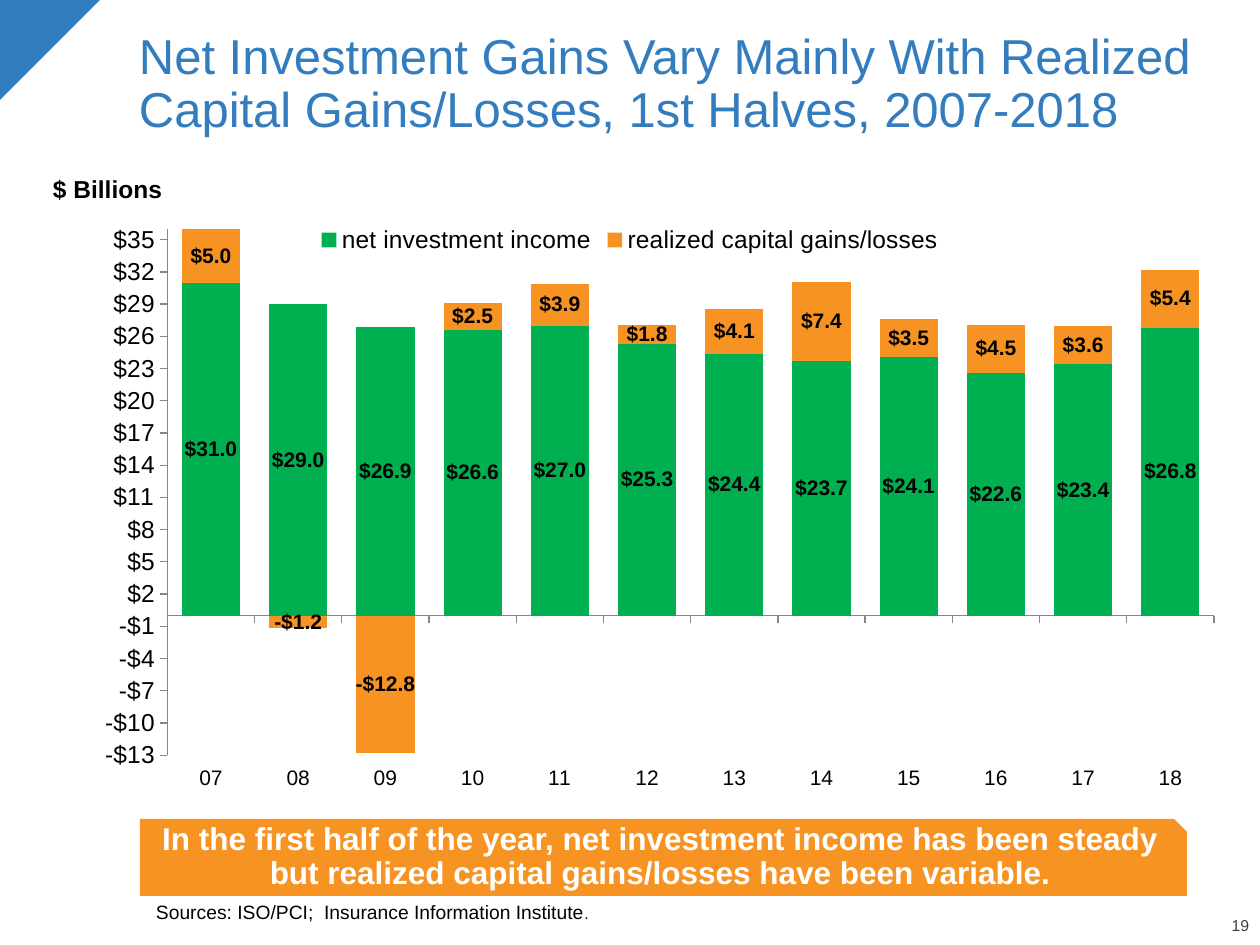
from lxml.etree import SubElement
from pptx import Presentation
from pptx.chart.data import CategoryChartData
from pptx.dml.color import RGBColor
from pptx.enum.chart import XL_CHART_TYPE, XL_LABEL_POSITION, XL_LEGEND_POSITION, XL_TICK_LABEL_POSITION, XL_TICK_MARK
from pptx.enum.shapes import MSO_SHAPE
from pptx.enum.text import MSO_ANCHOR, PP_ALIGN
from pptx.oxml.ns import qn
from pptx.util import Emu, Pt

SCALE = 914400 / 126
BLUE, GREEN, ORANGE = "337DBE", "00B050", "F69322"
BLACK, WHITE, GRAY, AXIS = "000000", "FFFFFF", "404040", "868686"
YEARS = [f"{year:02}" for year in range(7, 19)]
SERIES = [
    ("net investment income", GREEN,
     [31, 29, 26.9, 26.6, 27, 25.3, 24.4, 23.7, 24.1, 22.6, 23.4, 26.8]),
    ("realized capital gains/losses", ORANGE,
     [5, -1.2, -12.8, 2.5, 3.9, 1.8, 4.1, 7.4, 3.5, 4.5, 3.6, 5.4]),
]
PLOT = {"x": 0.108, "y": 0.028, "w": 0.887, "h": 0.867}


def px(*lengths):
    """Turn pixel lengths into EMU."""
    return [Emu(round(n * SCALE)) for n in lengths]


def color(hex_value):
    """Return the colour of a hex string."""
    return RGBColor.from_string(hex_value)


def set_attrs(target, values):
    """Set each attribute named in a dict."""
    for name, value in values.items():
        setattr(target, name, value)


def style_font(font, size, hex_value=BLACK, bold=False):
    """Apply the deck's typeface with a size and colour."""
    set_attrs(font, {"name": "Arial", "size": Pt(size), "bold": bold})
    font.color.rgb = color(hex_value)


def write_text(sp, runs, hex_value=BLACK, bold=False, align=PP_ALIGN.LEFT,
               anchor=MSO_ANCHOR.MIDDLE, insets=(13, 6, 13, 6)):
    """Fill a shape with one paragraph of (text, size) runs."""
    tf = sp.text_frame
    sides = ("margin_left", "margin_top", "margin_right", "margin_bottom")
    set_attrs(tf, {"word_wrap": True, "vertical_anchor": anchor,
                   **dict(zip(sides, px(*insets)))})
    p = tf.paragraphs[0]
    set_attrs(p, {"alignment": align, "line_spacing": 0.9})
    for text, size in runs:
        r = p.add_run()
        r.text = text
        style_font(r.font, size, hex_value, bold)


def add_text(s, box, runs, **style):
    """Add a text box."""
    write_text(s.shapes.add_textbox(*px(*box)), runs, **style)


def add_block(s, preset, box, fill):
    """Add a filled preset shape without outline."""
    sp = s.shapes.add_shape(preset, *px(*box))
    sp.shadow.inherit = False
    sp.fill.solid()
    sp.fill.fore_color.rgb = color(fill)
    sp.line.fill.background()
    return sp


def place_plot(chart):
    """Fix the inner plot area as fractions of the chart."""
    area = chart.element.find(".//" + qn("c:plotArea"))
    layout = area.find(qn("c:layout"))
    if layout is None:
        layout = SubElement(area, qn("c:layout"))
        area.insert(0, layout)
    manual = SubElement(layout, qn("c:manualLayout"))
    settings = {"layoutTarget": "inner", "xMode": "edge", "yMode": "edge", **PLOT}
    for name, value in settings.items():
        SubElement(manual, qn(f"c:{name}")).set("val", str(value))


def style_axes(chart):
    """Format the year and dollar axes."""
    years, dollars = chart.category_axis, chart.value_axis
    set_attrs(dollars, {"minimum_scale": -13, "maximum_scale": 36, "major_unit": 3})
    set_attrs(dollars.tick_labels,
              {"number_format": '"$"#,##0', "number_format_is_linked": False})
    years.tick_label_position = XL_TICK_LABEL_POSITION.LOW
    for axis, size in ((years, 12), (dollars, 14)):
        set_attrs(axis, {"has_major_gridlines": False,
                         "major_tick_mark": XL_TICK_MARK.OUTSIDE,
                         "minor_tick_mark": XL_TICK_MARK.NONE})
        axis.format.line.color.rgb = color(AXIS)
        style_font(axis.tick_labels.font, size)


def style_series(series, fill):
    """Colour a series and label its values."""
    series.invert_if_negative = False
    series.format.fill.solid()
    series.format.fill.fore_color.rgb = color(fill)
    labels = series.data_labels
    set_attrs(labels, {"show_value": True, "position": XL_LABEL_POSITION.CENTER,
                       "number_format": '"$"#,##0.0', "number_format_is_linked": False})
    style_font(labels.font, 12, bold=True)


def add_gains_chart(s, box):
    """Add the stacked column chart of income and gains."""
    data = CategoryChartData()
    data.categories = YEARS
    for name, _, values in SERIES:
        data.add_series(name, values)
    chart = s.shapes.add_chart(XL_CHART_TYPE.COLUMN_STACKED, *px(*box), data).chart
    style_font(chart.font, 12)
    set_attrs(chart, {"has_title": False, "has_legend": True})
    set_attrs(chart.legend, {"position": XL_LEGEND_POSITION.TOP, "include_in_layout": False})
    style_font(chart.legend.font, 14)
    plot = chart.plots[0]
    set_attrs(plot, {"gap_width": 50, "overlap": 100, "vary_by_categories": False})
    for series, (_, fill, _) in zip(plot.series, SERIES):
        style_series(series, fill)
    style_axes(chart)
    place_plot(chart)


def main():
    """Build and save the slide."""
    prs = Presentation()
    prs.slide_width, prs.slide_height = px(1260, 945)
    s = prs.slides.add_slide(prs.slide_layouts[6])
    add_block(s, MSO_SHAPE.RIGHT_TRIANGLE, (-1, 0, 101, 101), BLUE).rotation = 90
    add_text(s, (1188, 918, 61, 17), [("19", 9)], hex_value=GRAY,
             align=PP_ALIGN.RIGHT, anchor=MSO_ANCHOR.BOTTOM, insets=(0, 0, 0, 0))
    add_text(s, (126, 24, 1089, 123),
             [("Net Investment Gains Vary Mainly With Realized "
               "Capital Gains/Losses, 1st Halves, 2007-2018", 28)], hex_value=BLUE)
    add_text(s, (156, 867, 1058, 57),
             [("Sources: ISO/PCI;  Insurance Information Institute", 11), (".", 9)],
             anchor=MSO_ANCHOR.BOTTOM, insets=(0, 0, 0, 0))
    add_gains_chart(s, (40, 212, 1180, 607))
    banner = add_block(s, MSO_SHAPE.SNIP_1_RECTANGLE, (140, 819, 1047, 77), ORANGE)
    write_text(banner,
               [("In the first half of the year, net investment income has been steady "
                 "but realized capital gains/losses have been variable.", 18)],
               hex_value=WHITE, bold=True, align=PP_ALIGN.CENTER, insets=(13, 6, 13, 13))
    add_text(s, (40, 171, 145, 39), [("$ Billions", 14)], bold=True)
    prs.save("out.pptx")


if __name__ == "__main__":
    main()
